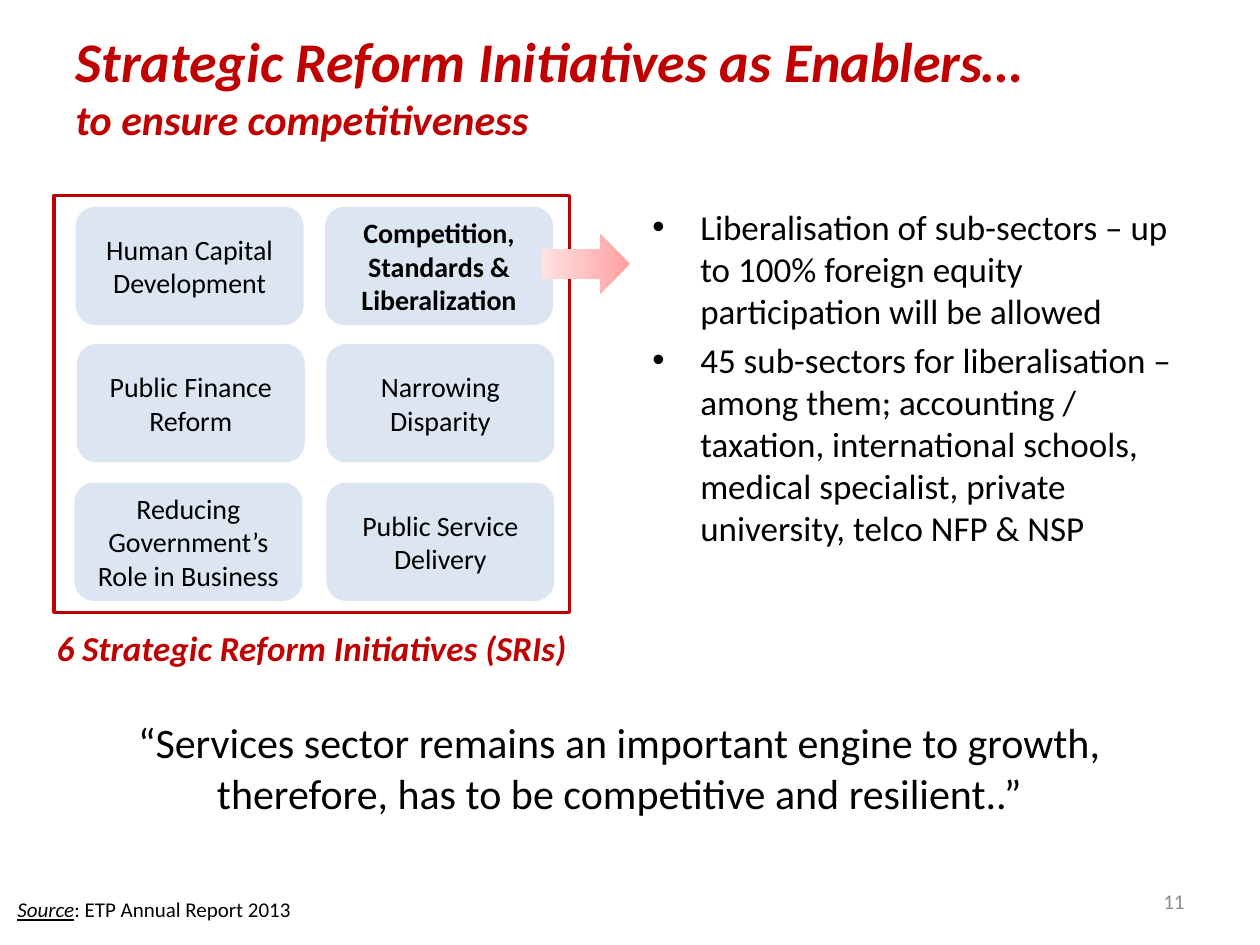
from lxml import etree
from pptx import Presentation
from pptx.dml.color import RGBColor
from pptx.enum.shapes import MSO_SHAPE as SHAPE
from pptx.enum.text import MSO_ANCHOR as ANCHOR, PP_ALIGN as ALIGN
from pptx.oxml.ns import qn
from pptx.util import Inches, Pt

RED, BLACK, GREY, PALE_BLUE = "C00000", "000000", "8C8C8C", "DCE6F2"


def style(p, size, color=BLACK, bold=False, italic=False, align=ALIGN.LEFT):
    """Format a paragraph and all of its runs."""
    p.alignment = align
    for r in p.runs:
        r.font.name = "Calibri"
        r.font.size = Pt(size)
        r.font.bold = bold
        r.font.italic = italic
        r.font.color.rgb = RGBColor.from_string(color)


def add_text(x, y, w, h, text, wrap=True):
    tf = s.shapes.add_textbox(Inches(x), Inches(y), Inches(w), Inches(h)).text_frame
    tf.word_wrap = wrap
    tf.text = text
    return tf


prs = Presentation()
prs.slide_width, prs.slide_height = Inches(10), Inches(7.5)
s = prs.slides.add_slide(prs.slide_layouts[5])

# Title
title = s.shapes.title
title.left, title.top = Inches(0.5), Inches(0.05)
title.width, title.height = Inches(9), Inches(1.25)
tf = title.text_frame
tf.text = "Strategic Reform Initiatives as Enablers…\vto ensure competitiveness"
tf.vertical_anchor = ANCHOR.MIDDLE
p = tf.paragraphs[0]
style(p, 32, RED, bold=True, italic=True)
p.runs[1].font.size = Pt(24)
line_break = p._p.find(qn("a:br"))
etree.SubElement(line_break, qn("a:rPr"), sz="3200")

# Liberalisation points
points = [
    "Liberalisation of sub-sectors – up to 100% foreign equity participation will be allowed",
    "45 sub-sectors for liberalisation – among them; accounting / taxation, "
    "international schools, medical specialist, private university, telco NFP & NSP",
]
tf = add_text(5.08, 1.58, 4.33, 3.28, "\n".join(points))
for i, p in enumerate(tf.paragraphs):
    pPr = p._p.get_or_add_pPr()
    pPr.set("marL", str(Inches(0.38)))
    pPr.set("indent", str(Inches(-0.38)))
    etree.SubElement(pPr, qn("a:buFont"), typeface="Arial")
    etree.SubElement(pPr, qn("a:buChar"), char="•")
    p.space_before = Pt(4 if i else 0)
    style(p, 20)

# Six initiatives: left, top, text
initiatives = [
    (0.6, 1.64, "Human Capital Development"),
    (2.58, 1.64, "Competition, Standards & Liberalization"),
    (0.61, 2.73, "Public Finance Reform"),
    (2.59, 2.73, "Narrowing Disparity"),
    (0.59, 3.83, "Reducing Government’s Role in Business"),
    (2.59, 3.83, "Public Service Delivery"),
]
for x, y, text in initiatives:
    sp = s.shapes.add_shape(SHAPE.ROUNDED_RECTANGLE, Inches(x), Inches(y), Inches(1.81), Inches(0.94))
    sp.shadow.inherit = False
    sp.fill.solid()
    sp.fill.fore_color.rgb = RGBColor.from_string(PALE_BLUE)
    sp.line.fill.background()
    tf = sp.text_frame
    tf.text = text
    tf.vertical_anchor = ANCHOR.MIDDLE
    style(tf.paragraphs[0], 16, bold=text.startswith("Competition"), align=ALIGN.CENTER)

frame = s.shapes.add_shape(SHAPE.RECTANGLE, Inches(0.43), Inches(1.55), Inches(4.09), Inches(3.31))
frame.shadow.inherit = False
frame.fill.background()
frame.line.color.rgb = RGBColor.from_string(RED)
frame.line.width = Pt(2)

arrow = s.shapes.add_shape(SHAPE.RIGHT_ARROW, Inches(4.29), Inches(1.86), Inches(0.71), Inches(0.47))
arrow.shadow.inherit = False
arrow.line.fill.background()
arrow.fill.gradient()
arrow.fill.gradient_angle = 180
for stop, color in zip(arrow.fill.gradient_stops, ("FFA0A0", "FFE3E3")):
    stop.color.rgb = RGBColor.from_string(color)

tf = add_text(0.35, 4.92, 4.28, 0.44, "6 Strategic Reform Initiatives (SRIs)", wrap=False)
style(tf.paragraphs[0], 20, RED, bold=True, italic=True)

# Closing quote
tf = add_text(0.98, 5.64, 7.87, 0.91,
              "“Services sector remains an important engine to growth, "
              "therefore, has to be competitive and resilient..”")
style(tf.paragraphs[0], 24, align=ALIGN.CENTER)

# Source and page number
tf = add_text(0.04, 7.07, 2.4, 0.3, "Source", wrap=False)
p = tf.paragraphs[0]
p.add_run().text = ": ETP Annual Report 2013"
style(p, 12)
p.runs[0].font.italic = True
p.runs[0].font.underline = True

tf = add_text(7.17, 6.95, 2.33, 0.4, "11")
tf.vertical_anchor = ANCHOR.MIDDLE
style(tf.paragraphs[0], 12, GREY, align=ALIGN.RIGHT)

prs.save("out.pptx")
